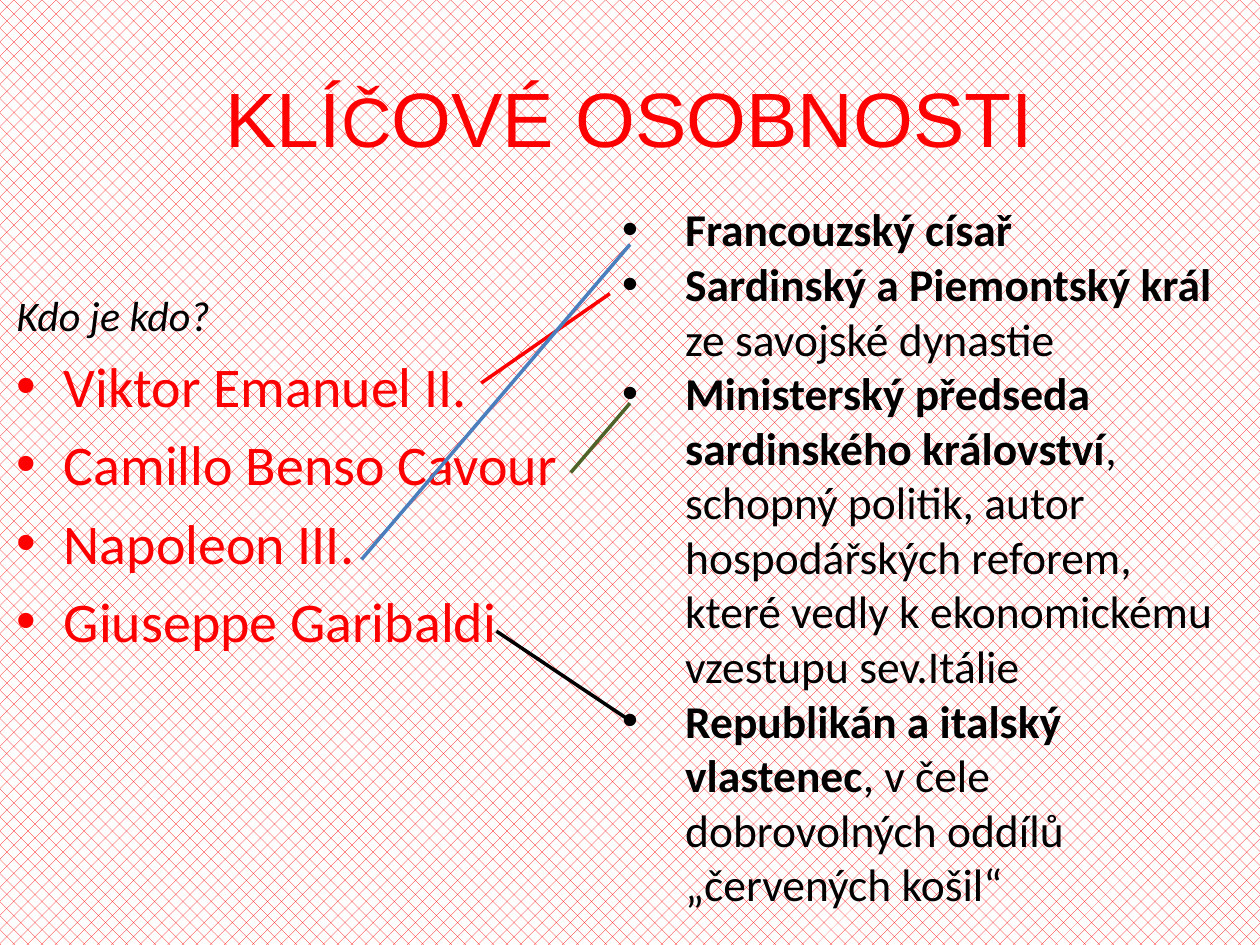
from dataclasses import dataclass

from lxml.etree import SubElement
from pptx import Presentation
from pptx.dml.color import RGBColor
from pptx.enum.dml import MSO_PATTERN
from pptx.enum.shapes import MSO_CONNECTOR
from pptx.enum.text import MSO_ANCHOR, MSO_AUTO_SIZE, PP_ALIGN
from pptx.oxml.ns import qn
from pptx.util import Pt

RED = RGBColor(0xFF, 0x00, 0x00)
WHITE = RGBColor(0xFF, 0xFF, 0xFF)
BLACK = RGBColor(0x00, 0x00, 0x00)
GREEN = RGBColor(0x4F, 0x62, 0x28)
BLUE = RGBColor(0x4B, 0x7E, 0xBC)


@dataclass(frozen=True)
class Role:
    title: str
    detail: str = ""


@dataclass(frozen=True)
class Match:
    """A line from a person to the matching role, in points."""
    start: tuple[float, float]
    end: tuple[float, float]
    color: RGBColor


TITLE_PARTS = [("KLÍ", 44), ("Č", 40), ("OVÉ OSOBNOSTI", 44)]
QUESTION = "Kdo je kdo?"
PEOPLE = ["Viktor Emanuel II.", "Camillo Benso Cavour", "Napoleon III.",
          "Giuseppe Garibaldi"]
ROLES = [
    Role("Francouzský císař"),
    Role("Sardinský a Piemontský král ", "ze savojské dynastie"),
    Role("Ministerský předseda sardinského království",
         ", schopný politik, autor hospodářských reforem, které vedly "
         "k ekonomickému vzestupu sev.Itálie"),
    Role("Republikán a italský vlastenec",
         ", v čele dobrovolných oddílů „červených košil“"),
]
MATCHES = [
    Match((275, 218.9), (348.5, 167.8), RED),
    Match((326.2, 270), (360, 230.4), GREEN),
    Match((206.6, 319.7), (360, 139.7), BLUE),
    Match((283.7, 360.7), (360, 411.8), BLACK),
]


def place(shape, left: float, top: float, width: float, height: float) -> None:
    shape.left, shape.top = Pt(left), Pt(top)
    shape.width, shape.height = Pt(width), Pt(height)


def style(run, font_name: str, size: float, color: RGBColor,
          bold: bool = False, italic: bool = False) -> None:
    font = run.font
    font.name, font.size = font_name, Pt(size)
    font.bold, font.italic = bold, italic
    font.color.rgb = color


def set_bullet(paragraph, hanging: float) -> None:
    """Give a hanging bullet, or none when hanging is 0."""
    properties = paragraph._p.get_or_add_pPr()
    properties.set("marL", str(Pt(hanging)))
    properties.set("indent", str(-Pt(hanging)))
    if hanging:
        SubElement(properties, qn("a:buFont"), typeface="Arial")
        SubElement(properties, qn("a:buChar"), char="•")
    else:
        SubElement(properties, qn("a:buNone"))


def fill_title(title) -> None:
    place(title, 36, 21.6, 648, 90)
    title.text_frame.vertical_anchor = MSO_ANCHOR.MIDDLE
    paragraph = title.text_frame.paragraphs[0]
    paragraph.alignment = PP_ALIGN.CENTER
    for text, size in TITLE_PARTS:
        run = paragraph.add_run()
        run.text = text
        style(run, "Arial", size, RED)


def fill_people(body) -> None:
    place(body, 2.2, 162, 324, 356.4)
    frame = body.text_frame
    frame.auto_size = MSO_AUTO_SIZE.NONE
    frame.text = "\n".join([QUESTION, *PEOPLE])
    question, *people = frame.paragraphs
    set_bullet(question, 0)
    style(question.runs[0], "Calibri", 24, BLACK, italic=True)
    for person in people:
        set_bullet(person, 27)
        style(person.runs[0], "Calibri", 32, RED)


def add_roles(slide) -> None:
    box = slide.shapes.add_textbox(Pt(348.5), Pt(111.6), Pt(357), Pt(416.9))
    frame = box.text_frame
    frame.word_wrap = True
    frame.auto_size = MSO_AUTO_SIZE.SHAPE_TO_FIT_TEXT
    frame.text = "\n".join(role.title for role in ROLES)
    for paragraph, role in zip(frame.paragraphs, ROLES):
        set_bullet(paragraph, 36)
        style(paragraph.runs[0], "Calibri", 26, BLACK, bold=True)
        if role.detail:
            detail = paragraph.add_run()
            detail.text = role.detail
            style(detail, "Calibri", 26, BLACK)


def add_match(slide, match: Match) -> None:
    connector = slide.shapes.add_connector(
        MSO_CONNECTOR.STRAIGHT, *map(Pt, match.start + match.end))
    connector.line.color.rgb = match.color
    connector.line.width = Pt(2)
    SubElement(connector._element.spPr, qn("a:effectLst"))


def main() -> None:
    presentation = Presentation()
    presentation.slide_width, presentation.slide_height = Pt(720), Pt(540)
    slide = presentation.slides.add_slide(presentation.slide_layouts[1])

    background = slide.background.fill
    background.patterned()
    background.pattern = MSO_PATTERN.PERCENT_25
    background.fore_color.rgb = RED
    background.back_color.rgb = WHITE

    fill_title(slide.shapes.title)
    fill_people(slide.placeholders[1])
    add_roles(slide)
    for match in MATCHES:
        add_match(slide, match)
    presentation.save("out.pptx")


if __name__ == "__main__":
    main()
